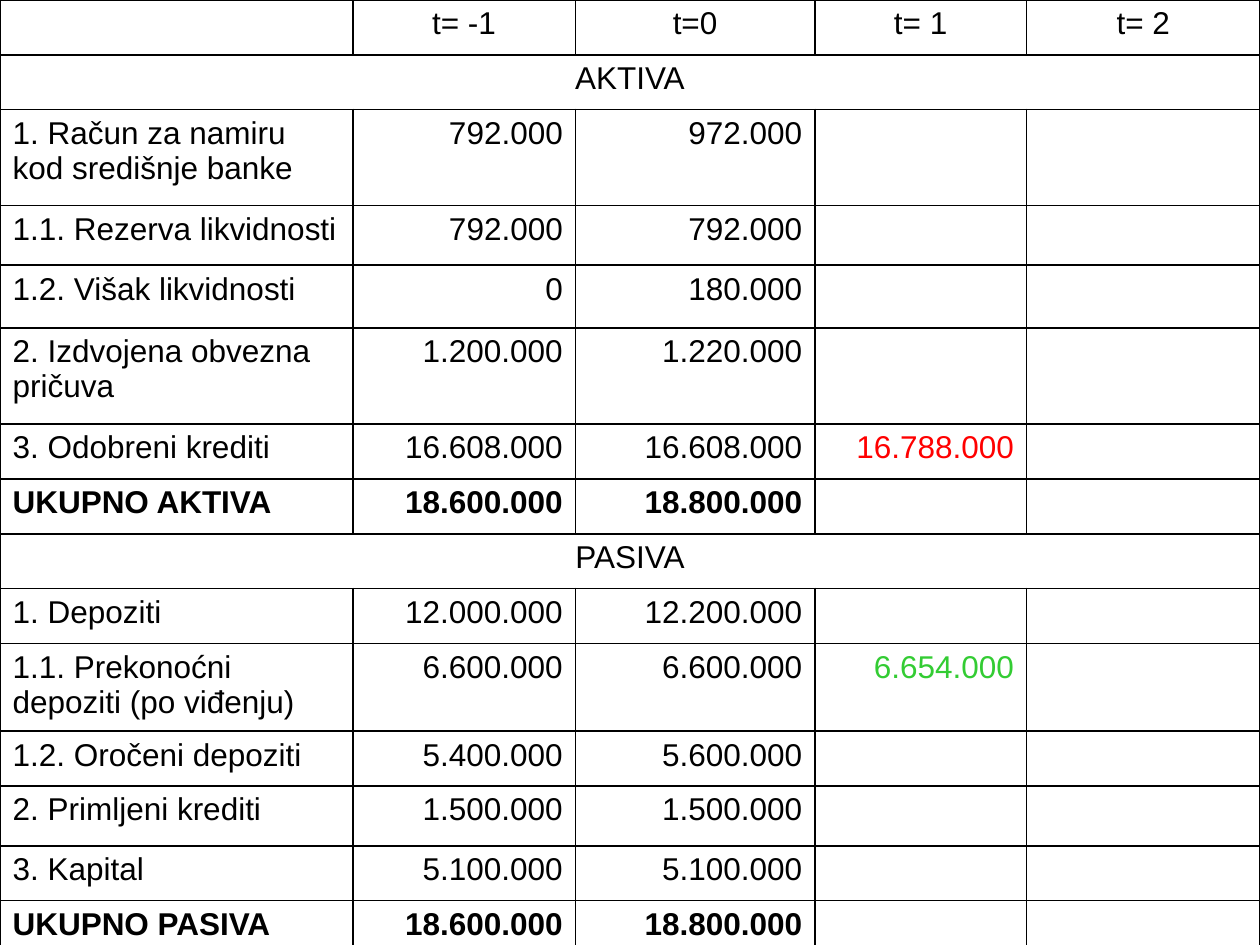
from lxml import etree
from pptx import Presentation
from pptx.dml.color import RGBColor
from pptx.enum.text import PP_ALIGN
from pptx.oxml.ns import qn
from pptx.util import Pt

LEFT, CENTER, RIGHT = PP_ALIGN.LEFT, PP_ALIGN.CENTER, PP_ALIGN.RIGHT
JUSTIFY = PP_ALIGN.JUSTIFY

COLORS = {"text": "000000", "border": "000000", "fill": "FFFFFF",
          "loan": "FF0000", "deposit": "33CC33"}
FONT, SIZE = "Arial", 18

COL_WIDTHS = [201.6, 127.2, 136.8, 121, 133.4]
# (height, cell texts); a row with a single text spans the whole table
ROWS = [
    (31.4, ["", "t= -1", "t=0", "t= 1", "t= 2"]),
    (31.2, ["AKTIVA"]),
    (55, ["1. Račun za namiru kod središnje banke", "792.000", "972.000", "", ""]),
    (34, ["1.1. Rezerva likvidnosti", "792.000", "792.000", "", ""]),
    (35.8, ["1.2. Višak likvidnosti", "0", "180.000", "", ""]),
    (55, ["2. Izdvojena obvezna pričuva", "1.200.000", "1.220.000", "", ""]),
    (31.4, ["3. Odobreni krediti", "16.608.000", "16.608.000", "16.788.000", ""]),
    (31.4, ["UKUPNO AKTIVA", "18.600.000", "18.800.000", "", ""]),
    (31.2, ["PASIVA"]),
    (31.4, ["1. Depoziti", "12.000.000", "12.200.000", "", ""]),
    (50.2, ["1.1. Prekonoćni depoziti (po viđenju)", "6.600.000", "6.600.000",
            "6.654.000", ""]),
    (31.4, ["1.2. Oročeni depoziti", "5.400.000", "5.600.000", "", ""]),
    (34.2, ["2. Primljeni krediti", "1.500.000", "1.500.000", "", ""]),
    (31.2, ["3. Kapital", "5.100.000", "5.100.000", "", ""]),
    (31.4, ["UKUPNO PASIVA", "18.600.000", "18.800.000", "", ""]),
]
HIGHLIGHTS = {"16.788.000": "loan", "6.654.000": "deposit"}
JUSTIFIED = {"3. Kapital", "UKUPNO PASIVA"}


def rgb(name):
    return RGBColor.from_string(COLORS[name])


def set_borders(cell, width=1):
    tc_pr = cell._tc.get_or_add_tcPr()
    for i, side in enumerate(("lnL", "lnR", "lnT", "lnB")):
        ln = etree.Element(qn("a:" + side), w=str(Pt(width)))
        fill = etree.SubElement(ln, qn("a:solidFill"))
        etree.SubElement(fill, qn("a:srgbClr"), val=COLORS["border"])
        tc_pr.insert(i, ln)


def alignment(row, col, text):
    if row == 0 or len(ROWS[row][1]) == 1:
        return CENTER
    if col > 0:
        return RIGHT
    return JUSTIFY if text in JUSTIFIED else LEFT


def write(cell, text, align, bold):
    cell.text_frame.text = text
    p = cell.text_frame.paragraphs[0]
    p.alignment = align
    p.font.size = Pt(SIZE)
    for r in p.runs:
        r.font.name = FONT
        r.font.size = Pt(SIZE)
        r.font.bold = bold
        r.font.color.rgb = rgb(HIGHLIGHTS.get(text, "text"))


def main():
    prs = Presentation()
    prs.slide_width, prs.slide_height = Pt(720), Pt(540)
    s = prs.slides.add_slide(prs.slide_layouts[6])

    height = sum(h for h, _ in ROWS)
    table = s.shapes.add_table(len(ROWS), len(COL_WIDTHS), Pt(0), Pt(0),
                               Pt(sum(COL_WIDTHS)), Pt(height)).table
    table.first_row = table.horz_banding = False
    for column, width in zip(table.columns, COL_WIDTHS):
        column.width = Pt(width)

    for i, (row_height, texts) in enumerate(ROWS):
        table.rows[i].height = Pt(row_height)
        for cell in table.rows[i].cells:
            cell.fill.solid()
            cell.fill.fore_color.rgb = rgb("fill")
            set_borders(cell)
        if len(texts) == 1:
            table.cell(i, 0).merge(table.cell(i, len(COL_WIDTHS) - 1))
        bold = texts[0].startswith("UKUPNO")
        for j, text in enumerate(texts):
            write(table.cell(i, j), text, alignment(i, j, text), bold)

    prs.save("out.pptx")


if __name__ == "__main__":
    main()
